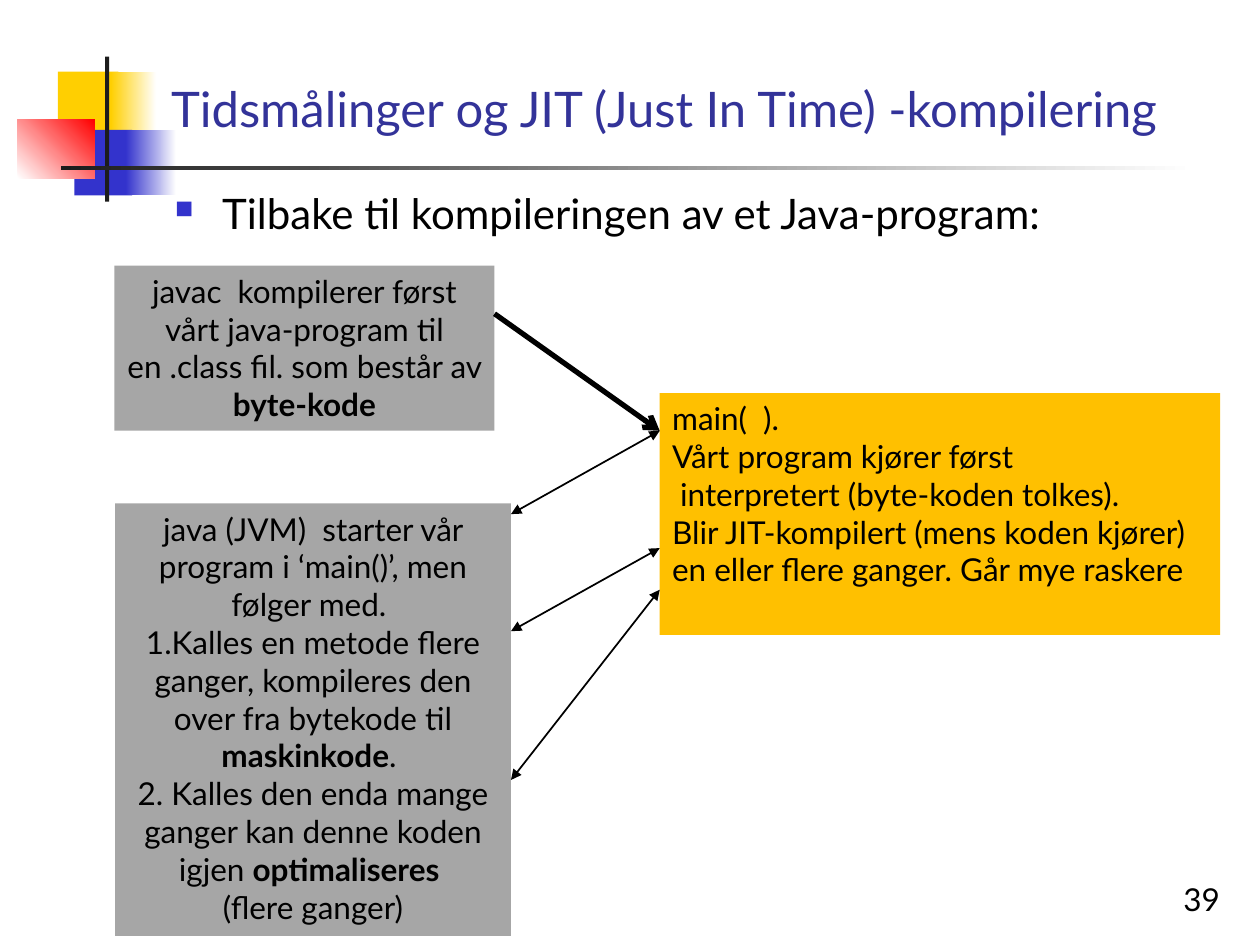
"""Build the slide on timing and JIT compilation of a Java program."""
from lxml import etree
from pptx import Presentation
from pptx.dml.color import RGBColor
from pptx.enum.shapes import MSO_CONNECTOR, MSO_SHAPE
from pptx.enum.text import MSO_ANCHOR, PP_ALIGN
from pptx.oxml.ns import qn
from pptx.util import Pt

RECTANGLE = MSO_SHAPE.RECTANGLE
STRAIGHT = MSO_CONNECTOR.STRAIGHT
TOP, BOTTOM = MSO_ANCHOR.TOP, MSO_ANCHOR.BOTTOM
LEFT, CENTER, RIGHT = PP_ALIGN.LEFT, PP_ALIGN.CENTER, PP_ALIGN.RIGHT
FONT = "Lato"
BLACK, WHITE, DARK = "000000", "FFFFFF", "1C1C1C"
YELLOW, BLUE, RED = "FFCF01", "3333CC", "FF0000"
GREY, ORANGE, TITLE_BLUE = "A6A6A6", "FFC000", "333399"


def rgb(value):
    return RGBColor.from_string(value)


def write(text, box, size=18, color=BLACK, align=LEFT, anchor=TOP, fill=None):
    """Write lines of text in a box; words between asterisks are bold."""
    area = slide.shapes.add_textbox(*map(Pt, box))
    if fill:
        area.fill.solid()
        area.fill.fore_color.rgb = rgb(fill)
    frame = area.text_frame
    frame.word_wrap = True
    frame.vertical_anchor = anchor
    for number, line in enumerate(text.split("\n")):
        paragraph = frame.add_paragraph() if number else frame.paragraphs[0]
        paragraph.alignment = align
        for part, words in enumerate(line.split("*")):
            if words:
                run = paragraph.add_run()
                run.text = words
                run.font.name = FONT
                run.font.size = Pt(size)
                run.font.bold = part % 2 == 1
                run.font.color.rgb = rgb(color)
    return frame


prs = Presentation()
prs.slide_width, prs.slide_height = Pt(720), Pt(540)
slide = prs.slides.add_slide(prs.slide_layouts[6])

ornament = [
    ((33.1, 41, 34.6, 37.4), [YELLOW], 0),
    ((63.4, 41, 25.9, 37.4), [YELLOW, WHITE], 0),
    ((42.5, 74.2, 33.1, 37.4), [BLUE], 0),
    ((72, 74.2, 28.8, 37.4), [BLUE, WHITE], 0),
    ((10, 68.4, 44.2, 33.4), [WHITE, RED], 45),
    ((60, 32.4, 2.4, 82.8), [DARK], 0),
    ((34.8, 95, 648, 2.2), [DARK, WHITE], 0),
]
for box, colors, angle in ornament:
    block = slide.shapes.add_shape(RECTANGLE, *map(Pt, box))
    block.shadow.inherit = False
    block.line.fill.background()
    if len(colors) == 1:
        block.fill.solid()
        block.fill.fore_color.rgb = rgb(colors[0])
    else:
        block.fill.gradient()
        block.fill.gradient_angle = angle
        for stop, color in zip(block.fill.gradient_stops, colors):
            stop.color.rgb = rgb(color)

write("Tidsmålinger og JIT (Just In Time) -kompilering",
      (90.7, 16.6, 613.4, 65.5), size=28, color=TITLE_BLUE, anchor=BOTTOM)
intro = write("Tilbake til kompileringen av et Java-program:",
              (92.9, 103.7, 612, 53.3), size=24)
bullet = intro.paragraphs[0]._p.get_or_add_pPr()
bullet.set("marL", str(Pt(27)))
bullet.set("indent", str(Pt(-27)))
bullet_color = etree.SubElement(bullet, qn("a:buClr"))
etree.SubElement(bullet_color, qn("a:srgbClr"), val=BLUE)
etree.SubElement(bullet, qn("a:buSzPct"), val="60000")
etree.SubElement(bullet, qn("a:buChar"), char="■")
write("39", (554.4, 491.8, 149.8, 36), align=RIGHT, anchor=BOTTOM)

write("javac  kompilerer først vårt java-program til en .class fil. "
      "som består av *byte-kode*",
      (65.4, 151.8, 217.2, 94.4), align=CENTER, fill=GREY)
write("main(  ).\nVårt program kjører først\n"
      " interpretert (byte-koden tolkes).\n"
      "Blir JIT-kompilert (mens koden kjører)\n"
      "en eller flere ganger. Går mye raskere",
      (377, 224.6, 320.2, 138.2), fill=ORANGE)
write(" java (JVM)  starter vår \n"
      "program i ‘main()’, men følger med. \n"
      "1.Kalles en metode flere ganger, kompileres den over fra bytekode "
      "til *maskinkode*. \n"
      "2. Kalles den enda mange ganger kan denne koden igjen "
      "*optimaliseres *\n(flere ganger)",
      (65.8, 287.6, 226.2, 247.2), align=CENTER, fill=GREY)

TWO_WAY = {"headEnd": "triangle", "tailEnd": "triangle"}
arrows = [
    ((292, 293.8, 377, 246.2), 1, TWO_WAY),
    ((292, 360.7, 377, 313.2), 1, TWO_WAY),
    ((292, 445.7, 377, 337), 1, TWO_WAY),
    ((282.6, 179.3, 377, 246.2), 3, {"tailEnd": "arrow"}),
]
for ends, width, heads in arrows:
    arrow = slide.shapes.add_connector(STRAIGHT, *map(Pt, ends))
    arrow.line.width = Pt(width)
    arrow.line.color.rgb = rgb(BLACK)
    for end, kind in heads.items():
        etree.SubElement(arrow.line._get_or_add_ln(), qn(f"a:{end}"), type=kind)
    etree.SubElement(arrow._element.spPr, qn("a:effectLst"))

prs.save("out.pptx")
